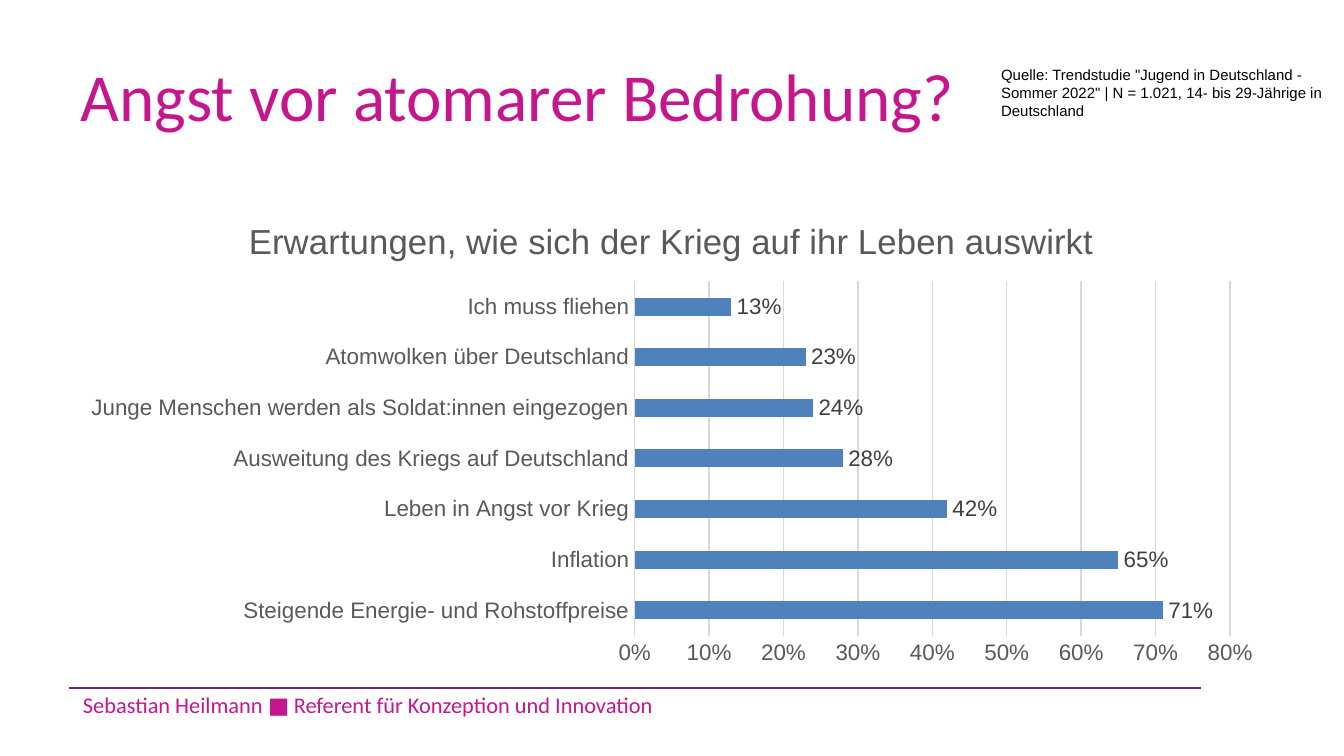
from dataclasses import dataclass

from lxml import etree
from pptx import Presentation
from pptx import util as u
from pptx.chart import data as chart_data
from pptx.dml.color import RGBColor
from pptx.enum import chart as chart_enum
from pptx.enum import shapes, text
from pptx.oxml import ns

MAGENTA = RGBColor(0xC6, 0x16, 0x8D)
PURPLE = RGBColor(0x67, 0x26, 0x86)
BLACK = RGBColor(0x00, 0x00, 0x00)
BAR_BLUE = RGBColor(0x4F, 0x81, 0xBD)
AXIS_GREY = RGBColor(0x59, 0x59, 0x59)
LABEL_GREY = RGBColor(0x40, 0x40, 0x40)
GRID_GREY = RGBColor(0xD9, 0xD9, 0xD9)

CHART_TITLE = "Erwartungen, wie sich der Krieg auf ihr Leben auswirkt"
EXPECTATIONS = {
    "Steigende Energie- und Rohstoffpreise": 0.71,
    "Inflation": 0.65,
    "Leben in Angst vor Krieg": 0.42,
    "Ausweitung des Kriegs auf Deutschland": 0.28,
    "Junge Menschen werden als Soldat:innen eingezogen": 0.24,
    "Atomwolken über Deutschland": 0.23,
    "Ich muss fliehen": 0.13,
}


@dataclass
class Label:
    content: str
    left: float
    top: float
    width: float
    height: float
    size: float
    font: str
    color: RGBColor
    anchor: text.MSO_ANCHOR = text.MSO_ANCHOR.MIDDLE


LABELS = [
    Label("Sebastian Heilmann ■ Referent für Konzeption und Innovation",
          37.4, 365.8, 368, 23.8, 12, "Calibri", MAGENTA),
    Label("Angst vor atomarer Bedrohung?",
          36, 16.6, 648, 67.7, 36, "Calibri", MAGENTA),
    Label('Quelle: Trendstudie "Jugend in Deutschland - Sommer 2022" | '
          "N = 1.021, 14- bis 29-Jährige in Deutschland",
          529.2, 31.7, 193, 36, 8, "Arial", BLACK, text.MSO_ANCHOR.TOP),
]


def style_font(font, size: float, color: RGBColor, name: str = "Arial") -> None:
    font.name = name
    font.size = u.Pt(size)
    font.bold = False
    font.color.rgb = color


def add_label(slide, label: Label) -> None:
    shape = slide.shapes.add_textbox(
        u.Pt(label.left), u.Pt(label.top), u.Pt(label.width), u.Pt(label.height))
    text_frame = shape.text_frame
    text_frame.word_wrap = True
    text_frame.vertical_anchor = label.anchor
    text_frame.text = label.content
    style_font(text_frame.paragraphs[0].runs[0].font,
               label.size, label.color, label.font)


def add_footer_line(slide) -> None:
    line = slide.shapes.add_connector(
        shapes.MSO_CONNECTOR.STRAIGHT,
        u.Pt(36.9), u.Pt(368.4), u.Pt(643.6), u.Pt(368.4))
    line.line.color.rgb = PURPLE
    line.line.width = u.Pt(1)
    etree.SubElement(line._element.spPr, ns.qn("a:effectLst"))


def style_axis(axis) -> None:
    axis.major_tick_mark = chart_enum.XL_TICK_MARK.NONE
    axis.minor_tick_mark = chart_enum.XL_TICK_MARK.NONE
    style_font(axis.tick_labels.font, 12, AXIS_GREY)


def style_line(line) -> None:
    line.color.rgb = GRID_GREY
    line.width = u.Pt(0.75)


def add_expectation_chart(slide) -> None:
    data = chart_data.CategoryChartData(number_format="0%")
    data.categories = list(EXPECTATIONS)
    data.add_series(CHART_TITLE, list(EXPECTATIONS.values()))
    chart = slide.shapes.add_chart(
        chart_enum.XL_CHART_TYPE.BAR_CLUSTERED,
        u.Pt(36), u.Pt(104.4), u.Pt(648), u.Pt(257), data).chart
    style_font(chart.font, 10, BLACK)
    chart.has_legend = False

    # Chart title
    chart.has_title = True
    title_frame = chart.chart_title.text_frame
    title_frame.text = CHART_TITLE
    style_font(title_frame.paragraphs[0].runs[0].font, 18.6, AXIS_GREY)
    chart.chart_title.include_in_layout = False

    # Axes
    style_axis(chart.category_axis)
    style_line(chart.category_axis.format.line)
    value_axis = chart.value_axis
    style_axis(value_axis)
    value_axis.minimum_scale = 0
    value_axis.maximum_scale = 0.8
    value_axis.major_unit = 0.1
    value_axis.format.line.fill.background()
    value_axis.tick_labels.number_format = "0%"
    value_axis.tick_labels.number_format_is_linked = False
    style_line(value_axis.major_gridlines.format.line)

    # Bars and their values
    plot = chart.plots[0]
    plot.gap_width = 182
    plot.vary_by_categories = False
    bars = plot.series[0]
    bars.format.fill.solid()
    bars.format.fill.fore_color.rgb = BAR_BLUE
    labels = bars.data_labels
    labels.show_value = True
    labels.number_format = "0%"
    labels.number_format_is_linked = False
    labels.position = chart_enum.XL_LABEL_POSITION.OUTSIDE_END
    style_font(labels.font, 12, LABEL_GREY)


def main() -> None:
    presentation = Presentation()
    presentation.slide_width = u.Pt(720)
    presentation.slide_height = u.Pt(405)
    slide = presentation.slides.add_slide(presentation.slide_layouts[6])

    footer, title, source_note = LABELS
    add_label(slide, footer)
    add_footer_line(slide)
    add_label(slide, title)
    add_expectation_chart(slide)
    add_label(slide, source_note)

    presentation.save("out.pptx")


if __name__ == "__main__":
    main()
